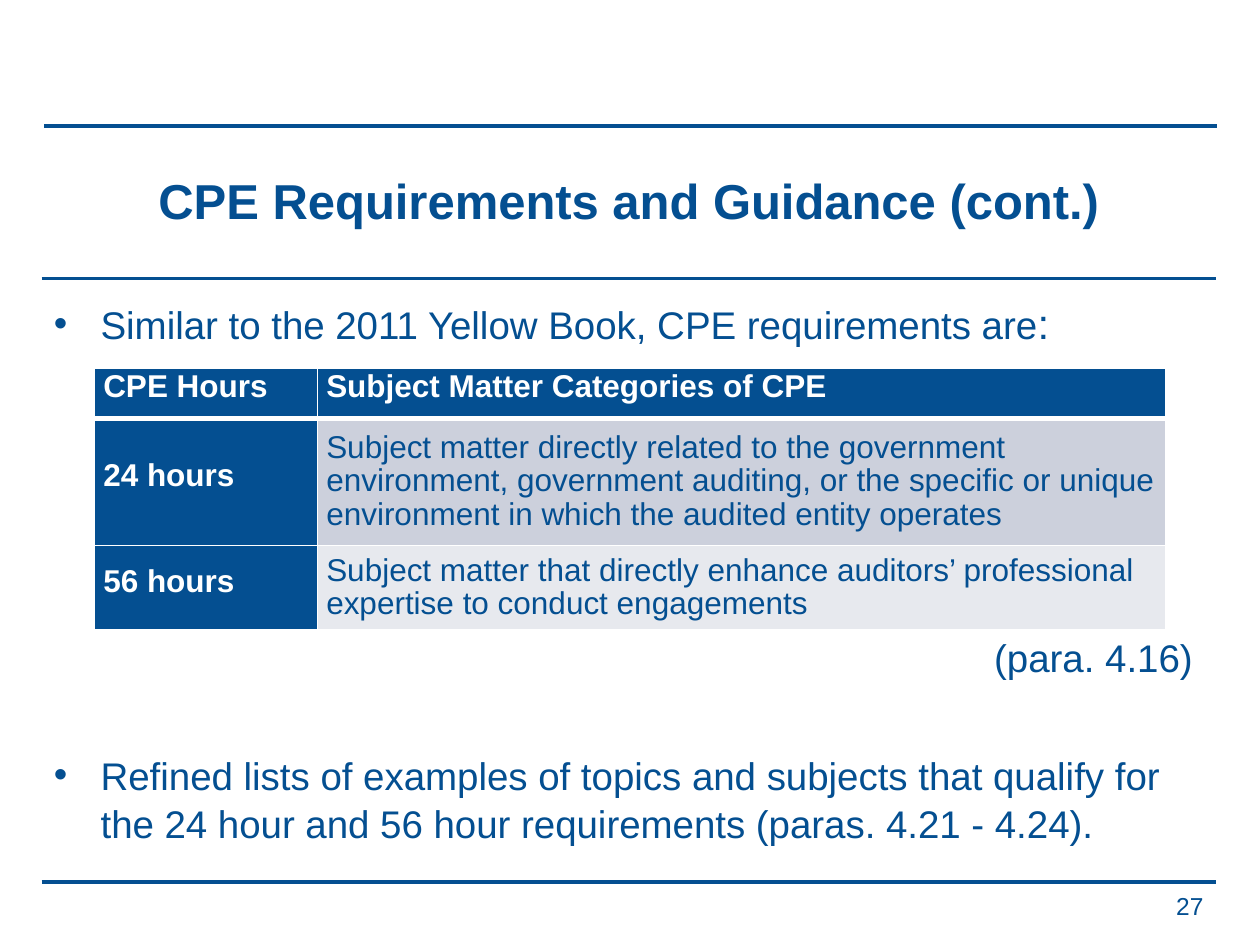
from dataclasses import dataclass

from pptx import Presentation
from pptx.dml.color import RGBColor
from pptx.enum.shapes import MSO_CONNECTOR
from pptx.enum.text import MSO_ANCHOR, PP_ALIGN
from pptx.oxml.ns import qn
from pptx.util import Inches, Pt
from lxml import etree

STRAIGHT = MSO_CONNECTOR.STRAIGHT
MIDDLE = MSO_ANCHOR.MIDDLE
TOP = MSO_ANCHOR.TOP
LEFT, CENTER, RIGHT = PP_ALIGN.LEFT, PP_ALIGN.CENTER, PP_ALIGN.RIGHT


@dataclass(frozen=True)
class Theme:
    font: str = "Arial"
    blue: str = "044F91"
    white: str = "FFFFFF"
    dark_band: str = "CCD0DC"
    light_band: str = "E7E9EE"
    title_size: int = 28
    body_size: int = 22
    colon_size: int = 24
    table_size: int = 18
    number_size: int = 14


THEME = Theme()

RULES = [(0.35, 9.66, 1, 2.5), (0.33, 9.65, 7, 2.5), (0.33, 9.65, 2.21, 1.5)]
COLUMN_WIDTHS = [1.77, 6.73]
ROW_HEIGHTS = [0.4, 1.01, 0.67]
CPE_ROWS = [
    ("CPE Hours", "Subject Matter Categories of CPE"),
    ("24 hours", "Subject matter directly related to the government environment, "
                 "government auditing, or the specific or unique environment in "
                 "which the audited entity operates"),
    ("56 hours", "Subject matter that directly enhance auditors’ professional "
                 "expertise to conduct engagements"),
]


def format_span(span, size, color=THEME.blue, bold=False):
    span.font.name = THEME.font
    span.font.size = Pt(size)
    span.font.bold = bold
    span.font.color.rgb = RGBColor.from_string(color)


def add_rule(page, left, right, height, weight):
    rule = page.shapes.add_connector(
        STRAIGHT, Inches(left), Inches(height), Inches(right), Inches(height))
    rule.line.color.rgb = RGBColor.from_string(THEME.blue)
    rule.line.width = Pt(weight)
    etree.SubElement(rule._element.spPr, qn("a:effectLst"))


def set_title(page, text):
    title = page.shapes.title
    title.left, title.top = Inches(0.33), Inches(1.09)
    title.width, title.height = Inches(9.32), Inches(1)
    title.text_frame.text = text
    title.text_frame.vertical_anchor = MIDDLE
    para = title.text_frame.paragraphs[0]
    para.alignment = CENTER
    format_span(para.runs[0], THEME.title_size, bold=True)


def add_box(page, left, top, width, height, anchor):
    box = page.shapes.add_textbox(
        Inches(left), Inches(top), Inches(width), Inches(height))
    frame = box.text_frame
    frame.word_wrap = True
    frame.vertical_anchor = anchor
    return frame


def add_bullet(para):
    properties = para._p.get_or_add_pPr()
    properties.set("marL", str(Inches(0.37)))
    properties.set("indent", str(-Inches(0.37)))
    etree.SubElement(properties, qn("a:buFont"), typeface=THEME.font)
    etree.SubElement(properties, qn("a:buChar"), char="•")


def write_para(para, text, space_before=0, bulleted=False, alignment=LEFT):
    para.text = text
    if bulleted:
        add_bullet(para)
    para.alignment = alignment
    para.line_spacing = 1.06
    para.space_before = Pt(space_before)
    format_span(para.runs[0], THEME.body_size)


def add_body(page):
    frame = add_box(page, 0.33, 2.29, 9.32, 4.62, TOP)
    opening = frame.paragraphs[0]
    write_para(opening, "Similar to the 2011 Yellow Book, CPE requirements are",
               bulleted=True)
    colon = opening.add_run()
    colon.text = ":"
    format_span(colon, THEME.colon_size)
    write_para(frame.add_paragraph(), "(para. 4.16) ", 162, alignment=RIGHT)
    write_para(frame.add_paragraph(),
               "Refined lists of examples of topics and subjects that qualify for "
               "the 24 hour and 56 hour requirements (paras. 4.21 - 4.24).",
               39, bulleted=True)


def set_borders(cell, bottom_weight):
    properties = cell._tc.get_or_add_tcPr()
    weights = {"a:lnL": 1, "a:lnR": 1, "a:lnT": 1, "a:lnB": bottom_weight}
    for index, (side, weight) in enumerate(weights.items()):
        border = etree.Element(qn(side), w=str(Pt(weight)))
        fill = etree.SubElement(border, qn("a:solidFill"))
        etree.SubElement(fill, qn("a:srgbClr"), val=THEME.white)
        properties.insert(index, border)


def fill_cell(cell, text, fill, heading, bottom_weight):
    cell.text_frame.text = text
    cell.vertical_anchor = MIDDLE
    cell.margin_left = cell.margin_right = Inches(0.07)
    cell.margin_top = cell.margin_bottom = 0
    cell.fill.solid()
    cell.fill.fore_color.rgb = RGBColor.from_string(fill)
    set_borders(cell, bottom_weight)
    para = cell.text_frame.paragraphs[0]
    para.line_spacing = Pt(13 if heading else 19)
    color = THEME.white if heading else THEME.blue
    format_span(para.runs[0], THEME.table_size, color, heading)


def add_hours_table(page):
    table = page.shapes.add_table(
        len(CPE_ROWS), len(COLUMN_WIDTHS), Inches(0.75), Inches(2.92),
        Inches(sum(COLUMN_WIDTHS)), Inches(sum(ROW_HEIGHTS))).table
    table.first_col = True
    for column, width in zip(table.columns, COLUMN_WIDTHS):
        column.width = Inches(width)
    for row, height in zip(table.rows, ROW_HEIGHTS):
        row.height = Inches(height)
    bands = [THEME.blue, THEME.dark_band, THEME.light_band]
    for row_index, texts in enumerate(CPE_ROWS):
        for column_index, text in enumerate(texts):
            heading = row_index == 0 or column_index == 0
            fill = THEME.blue if heading else bands[row_index]
            fill_cell(table.cell(row_index, column_index), text, fill, heading,
                      3 if row_index == 0 else 1)


def add_page_number(page, number):
    frame = add_box(page, 7.32, 7.01, 2.33, 0.35, MIDDLE)
    frame.text = number
    para = frame.paragraphs[0]
    para.alignment = RIGHT
    format_span(para.runs[0], THEME.number_size)


def main():
    deck = Presentation()
    deck.slide_width, deck.slide_height = Inches(10), Inches(7.5)
    page = deck.slides.add_slide(deck.slide_layouts[5])
    for rule in RULES:
        add_rule(page, *rule)
    set_title(page, "CPE Requirements and Guidance (cont.)")
    add_body(page)
    add_page_number(page, "27")
    add_hours_table(page)
    deck.save("out.pptx")


if __name__ == "__main__":
    main()
